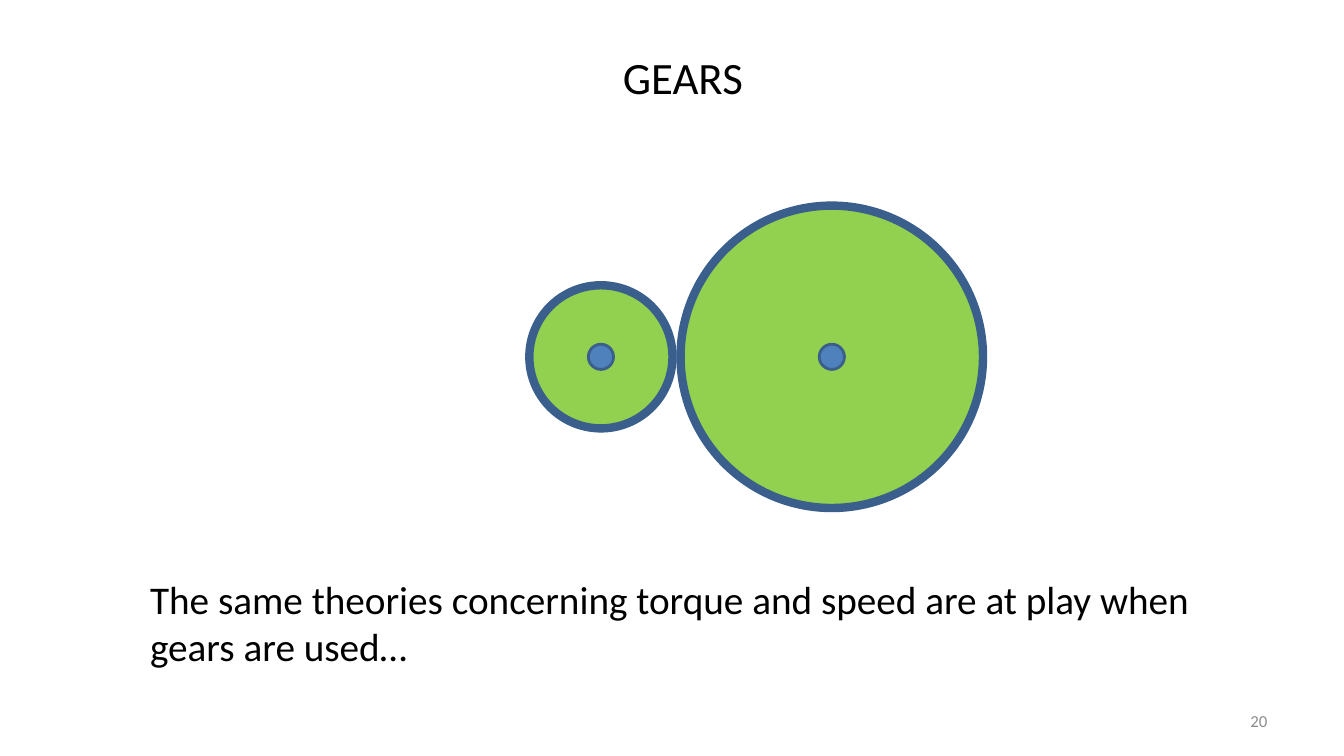
from dataclasses import dataclass

from pptx import Presentation
from pptx.dml.color import RGBColor
from pptx.enum.shapes import MSO_SHAPE
from pptx.enum.text import MSO_ANCHOR, MSO_AUTO_SIZE, PP_ALIGN
from pptx.util import Emu, Pt


@dataclass(frozen=True)
class Theme:
    font: str = "Calibri"
    text: str = "000000"
    muted: str = "8C8C8C"
    gear: str = "92D050"
    axle: str = "4F81BD"
    outline: str = "3A5F8C"
    title_size: int = 32
    body_size: int = 28
    number_size: int = 12
    gear_line: int = 6
    axle_line: int = 2


THEME = Theme()
EMU_PER_PX = 9144
AXLE_DIAMETER = 25
GEAR_CENTRE_Y = 354


def px(length):
    return Emu(round(length * EMU_PER_PX))


def add_disc(slide, centre_x, diameter, fill, line_width):
    disc = slide.shapes.add_shape(
        MSO_SHAPE.OVAL,
        px(centre_x - diameter / 2),
        px(GEAR_CENTRE_Y - diameter / 2),
        px(diameter),
        px(diameter),
    )
    disc.shadow.inherit = False
    disc.fill.solid()
    disc.fill.fore_color.rgb = RGBColor.from_string(fill)
    disc.line.color.rgb = RGBColor.from_string(THEME.outline)
    disc.line.width = Pt(line_width)


def add_gear(slide, centre_x, diameter):
    add_disc(slide, centre_x, diameter, THEME.gear, THEME.gear_line)
    add_disc(slide, centre_x, AXLE_DIAMETER, THEME.axle, THEME.axle_line)


def add_text(slide, wording, box, size, color=THEME.text,
             align=PP_ALIGN.LEFT, anchor=MSO_ANCHOR.TOP,
             auto_size=MSO_AUTO_SIZE.SHAPE_TO_FIT_TEXT):
    frame = slide.shapes.add_textbox(*map(px, box)).text_frame
    frame.text = wording
    frame.word_wrap = True
    frame.auto_size = auto_size
    frame.vertical_anchor = anchor
    paragraph = frame.paragraphs[0]
    paragraph.alignment = align
    font = paragraph.runs[0].font
    font.name = THEME.font
    font.size = Pt(size)
    font.color.rgb = RGBColor.from_string(color)


def main():
    presentation = Presentation()
    presentation.slide_width = px(1333)
    presentation.slide_height = px(750)
    slide = presentation.slides.add_slide(presentation.slide_layouts[6])

    add_gear(slide, centre_x=825, diameter=300)
    add_gear(slide, centre_x=596, diameter=142)
    add_text(slide, "GEARS", (608, 44, 152, 64), THEME.title_size)
    add_text(
        slide,
        "The same theories concerning torque and speed are at play when gears are used…",
        (139, 566, 1091, 104),
        THEME.body_size,
    )
    add_text(slide, "20", (956, 695, 311, 40), THEME.number_size, THEME.muted,
             PP_ALIGN.RIGHT, MSO_ANCHOR.MIDDLE, MSO_AUTO_SIZE.NONE)

    presentation.save("out.pptx")


if __name__ == "__main__":
    main()
